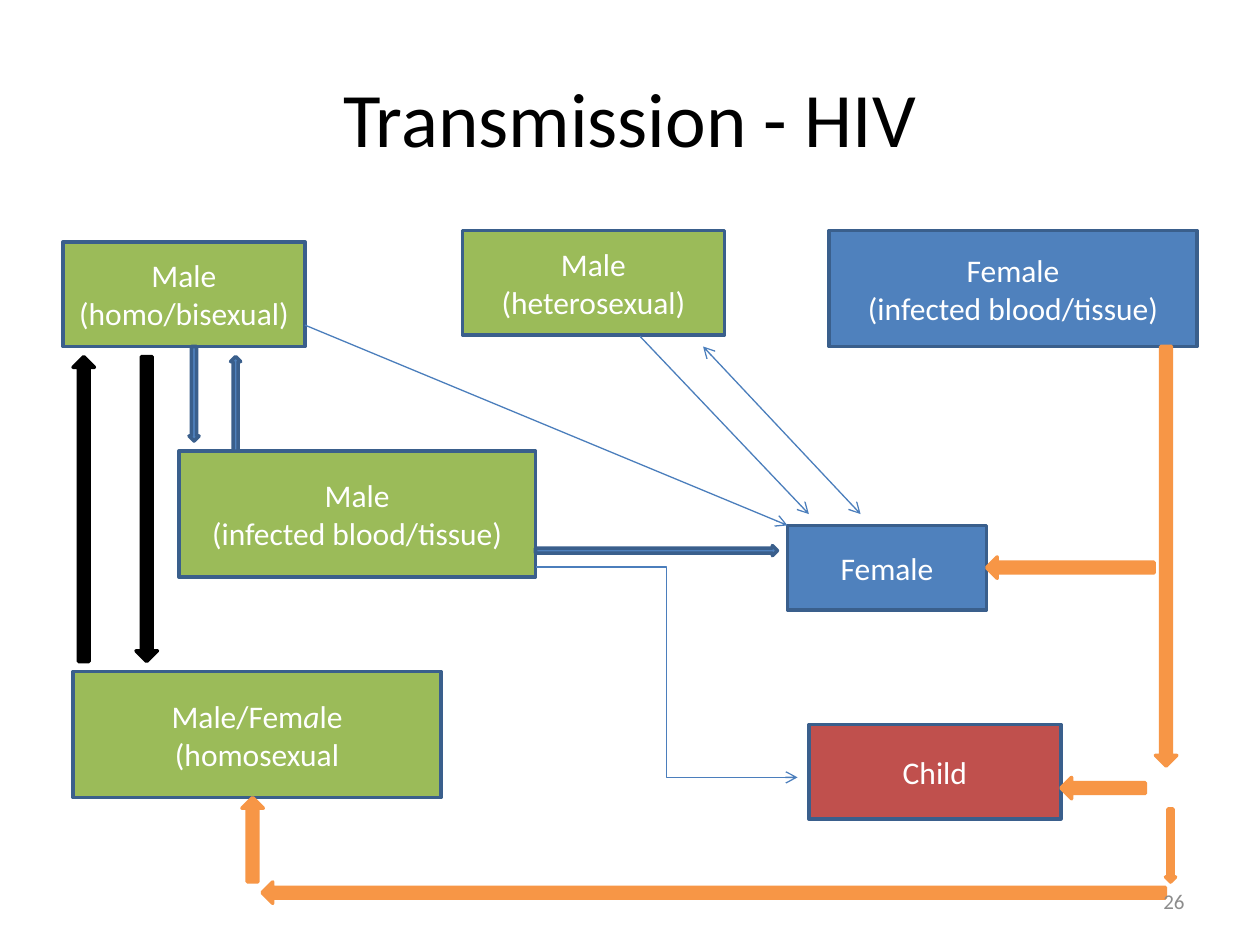
import pptx
import pptx.dml.color
import pptx.enum.shapes
import pptx.enum.text
import pptx.oxml
import pptx.oxml.ns
import pptx.util

Inches = pptx.util.Inches
Pt = pptx.util.Pt
Shape = pptx.enum.shapes.MSO_SHAPE
Link = pptx.enum.shapes.MSO_CONNECTOR
Align = pptx.enum.text.PP_ALIGN

GREEN, BLUE, RED = "9BBB59", "4F81BD", "C0504D"
ORANGE, BLACK, WHITE, GREY = "F79646", "000000", "FFFFFF", "8C8C8C"
EDGE, THIN = "3A5F8C", "4B7EBC"


def color(code):
    return pptx.dml.color.RGBColor.from_string(code)


class Board:
    """Holds the style and the current slide."""

    font = "Calibri"

    def __init__(self, slide):
        self.slide = slide
        self.shapes = slide.shapes

    def style(self, frame, size, code, align):
        frame.word_wrap = True
        frame.vertical_anchor = pptx.enum.text.MSO_ANCHOR.MIDDLE
        for para in frame.paragraphs:
            para.alignment = align
            for run in para.runs:
                run.font.name = self.font
                run.font.size = Pt(size)
                run.font.color.rgb = color(code)

    def title(self, text, place):
        head = self.shapes.title
        head.left, head.top, head.width, head.height = map(Inches, place)
        head.text_frame.text = text
        self.style(head.text_frame, 44, BLACK, Align.CENTER)

    def solid(self, kind, place, fill, edge):
        shape = self.shapes.add_shape(kind, *map(Inches, place))
        shape.shadow.inherit = False
        shape.fill.solid()
        shape.fill.fore_color.rgb = color(fill)
        shape.line.color.rgb = color(edge)
        shape.line.width = Pt(2)
        return shape

    def box(self, text, place, fill):
        shape = self.solid(Shape.RECTANGLE, place, fill, EDGE)
        shape.text_frame.text = text
        self.style(shape.text_frame, 18, WHITE, Align.CENTER)
        return shape

    def line(self, kind, start, end, both=False):
        """Draw a thin link with an open arrowhead at its end, or at both ends."""
        link = self.shapes.add_connector(kind, *map(Inches, start + end))
        link.line.color.rgb = color(THIN)
        link.line.width = Pt(0.75)
        stroke = link.line._get_or_add_ln()
        for tag in ("a:headEnd", "a:tailEnd") if both else ("a:tailEnd",):
            tip = pptx.oxml.xmlchemy.OxmlElement(tag)
            tip.set("type", "arrow")
            stroke.append(tip)
        link._element.spPr.append(pptx.oxml.xmlchemy.OxmlElement("a:effectLst"))

    def number(self, text, place):
        note = self.shapes.add_textbox(*map(Inches, place))
        note.text_frame.text = text
        self.style(note.text_frame, 12, GREY, Align.RIGHT)


def main():
    deck = pptx.Presentation()
    deck.slide_width, deck.slide_height = Inches(10), Inches(7.5)
    board = Board(deck.slides.add_slide(deck.slide_layouts[5]))
    board.title("Transmission - HIV", (0.5, 0.3, 9, 1.25))

    for text, place, fill in (
        ("Male\n(homo/bisexual)", (0.5, 1.92, 1.92, 0.83), GREEN),
        ("Male\n(heterosexual)", (3.67, 1.83, 2.08, 0.83), GREEN),
        ("Female\n(infected blood/tissue)", (6.58, 1.83, 2.92, 0.92), BLUE),
        ("Male\n(infected blood/tissue)", (1.42, 3.58, 2.83, 1), GREEN),
        ("Female", (6.25, 4.17, 1.58, 0.67), BLUE),
        ("Child", (6.42, 5.75, 2, 0.75), RED),
    ):
        board.box(text, place, fill)

    mixed = board.box("Male/Fem\n(homosexual", (0.58, 5.33, 2.92, 1), GREEN)
    first = mixed.text_frame.paragraphs[0]
    for text, slant in (("a", True), ("le", False)):
        run = first.add_run()
        run.text = text
        run.font.italic = slant
    board.style(mixed.text_frame, 18, WHITE, Align.CENTER)

    up, down = Shape.UP_ARROW, Shape.DOWN_ARROW
    left, right = Shape.LEFT_ARROW, Shape.RIGHT_ARROW
    for fill, edge, arrows in (
        (ORANGE, ORANGE, (
            (down, (9.17, 2.75, 0.17, 3.33)),
            (left, (8.42, 6.17, 0.67, 0.17)),
            (down, (9.25, 6.42, 0.08, 0.58)),
            (left, (2.08, 7, 7.17, 0.17)),
            (up, (1.92, 6.33, 0.17, 0.67)),
            (left, (7.83, 4.42, 1.33, 0.17)),
        )),
        (BLACK, BLACK, (
            (up, (0.58, 2.83, 0.17, 2.42)),
            (down, (1.08, 2.83, 0.17, 2.42)),
        )),
        (BLUE, EDGE, (
            (down, (1.5, 2.75, 0.08, 0.75)),
            (up, (1.83, 2.83, 0.08, 0.75)),
            (right, (4.25, 4.33, 1.92, 0.08)),
        )),
    ):
        for kind, place in arrows:
            board.solid(kind, place, fill, edge)

    board.line(Link.ELBOW, (4.25, 4.5), (6.33, 6.17))
    board.line(Link.STRAIGHT, (5.08, 2.67), (6.42, 4.08))
    board.line(Link.STRAIGHT, (5.58, 2.75), (6.83, 4.08), both=True)
    board.line(Link.STRAIGHT, (2.42, 2.58), (6.25, 4.17))
    board.number("26", (7.17, 6.95, 2.33, 0.4))
    deck.save("out.pptx")


if __name__ == "__main__":
    main()
